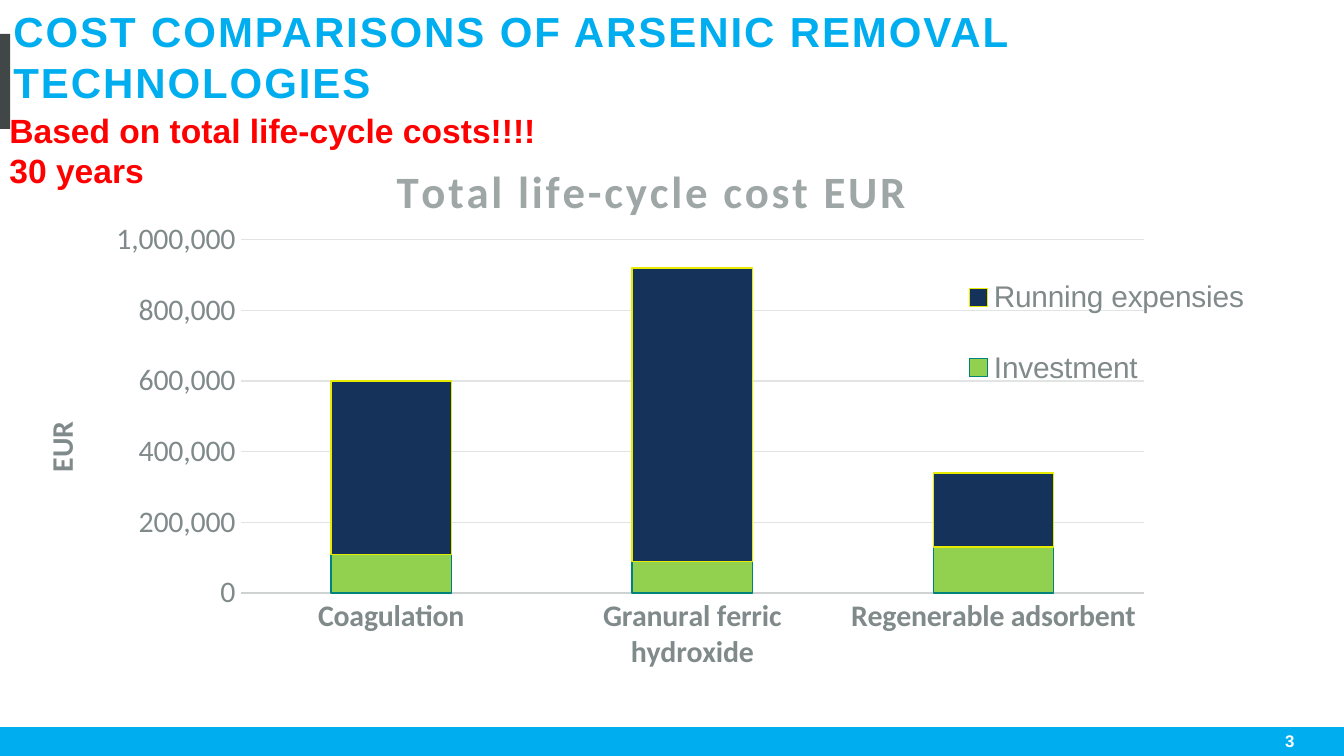
from lxml.etree import SubElement
from pptx import Presentation
from pptx.chart.data import CategoryChartData
from pptx.dml.color import RGBColor
from pptx.enum.chart import XL_CHART_TYPE, XL_LEGEND_POSITION, XL_TICK_MARK
from pptx.enum.shapes import MSO_SHAPE
from pptx.enum.text import MSO_ANCHOR, MSO_AUTO_SIZE, PP_ALIGN
from pptx.oxml import parse_xml
from pptx.oxml.ns import nsdecls, qn
from pptx.util import Inches, Pt

W = 10
H = W * 9 / 16
BLUE, DARK, GREY = "00AEEF", "414646", "818A8A"
CATEGORIES = ["Coagulation", "Granural ferric hydroxide", "Regenerable adsorbent"]
SERIES = [  # name, values, fill, line
    ("Investment", (110000, 90000, 130000), "92D050", "00827D"),
    ("Running expensies", (490000, 830000, 210000), "14325A", "E6EB00"),
]


def rgb(hex_color):
    return RGBColor.from_string(hex_color)


def emu(box):
    return [Inches(v) for v in box]


def part(box, x, y, w, h):
    """Return the part of a box given as shares of its width and height."""
    left, top, width, height = box
    return left + x * width, top + y * height, w * width, h * height


def set_font(font, color, **values):
    for name, value in {"name": "Arial", "bold": True, **values}.items():
        setattr(font, name, value)
    font.color.rgb = rgb(color)


def set_line(line, color, width=0.75):
    line.color.rgb = rgb(color)
    line.width = Pt(width)


def set_frame(tf, **values):
    defaults = {"word_wrap": True, "auto_size": MSO_AUTO_SIZE.NONE,
                "vertical_anchor": MSO_ANCHOR.MIDDLE}
    for name, value in {**defaults, **values}.items():
        setattr(tf, name, value)


def add_bar(s, box, color):
    sp = s.shapes.add_shape(MSO_SHAPE.RECTANGLE, *emu(box))
    sp.shadow.inherit = False
    sp.fill.solid()
    sp.fill.fore_color.rgb = rgb(color)
    sp.line.fill.background()
    return sp


def add_text(s, box, lines, color, size, align=PP_ALIGN.LEFT, inset=0.07):
    tf = s.shapes.add_textbox(*emu(box)).text_frame
    set_frame(tf, margin_left=Inches(inset), margin_right=Inches(inset),
              margin_top=Inches(0.04), margin_bottom=Inches(0.04))
    for i, line in enumerate(lines):
        p = tf.add_paragraph() if i else tf.paragraphs[0]
        p.alignment = align
        r = p.add_run()
        r.text = line
        set_font(r.font, color, size=Pt(size))


def add_footer(s, box):
    bar = add_bar(s, box, BLUE)
    set_line(bar.line, BLUE)
    add_text(s, part(box, 0.729, -0.24, 0.244, 1.43), ["3"], "FFFFFF", 9,
             PP_ALIGN.RIGHT, inset=0.1)


def add_heading(s, box):
    add_bar(s, part(box, 0, 0, 0.0075, 0.59), DARK)
    title = s.shapes.title
    title.left, title.top, title.width, title.height = emu(part(box, 0, 0.05, 0.9, 0.5))
    tf = title.text_frame
    set_frame(tf, margin_left=Inches(0.1), margin_right=Inches(0.1),
              margin_top=Inches(0.05), margin_bottom=Inches(0.44))
    p = tf.paragraphs[0]
    p.alignment = PP_ALIGN.LEFT
    r = p.add_run()
    r.text = "COST COMPARISONS OF ARSENIC REMOVAL TECHNOLOGIES"
    set_font(r.font, BLUE, size=Pt(22.5))
    r.font._element.set("spc", "100")
    add_text(s, part(box, 0, 0.435, 0.454, 0.57),
             ["Based on total life-cycle costs!!!!", "30 years"], "FF0000", 18)


def set_layout(element, x, y, w=None, h=None, inner=False):
    """Place a chart part by shares of the chart's size."""
    for old in element.findall(qn("c:layout")):
        element.remove(old)
    layout = parse_xml(f"<c:layout {nsdecls('c')}/>")
    manual = SubElement(layout, qn("c:manualLayout"))
    values = {"layoutTarget": "inner" if inner else None,
              "xMode": "edge", "yMode": "edge", "x": x, "y": y, "w": w, "h": h}
    for tag, value in values.items():
        if value is not None:
            SubElement(manual, qn(f"c:{tag}")).set("val", str(value))
    before = [c for c in element if c.tag in (qn("c:tx"), qn("c:legendPos"))]
    element.insert(element.index(before[-1]) + 1 if before else 0, layout)


def set_title(title, text, color, size, x, y, spacing=0):
    r = title.text_frame.paragraphs[0].add_run()
    r.text = text
    set_font(r.font, color, size=Pt(size), name="Calibri")
    r.font._element.set("spc", str(spacing))
    set_layout(title._element, x, y)


def format_axes(chart):
    cat, val = chart.category_axis, chart.value_axis
    for axis, bold in ((cat, True), (val, False)):
        axis.major_tick_mark = axis.minor_tick_mark = XL_TICK_MARK.NONE
        set_font(axis.tick_labels.font, GREY, size=Pt(16), name="Calibri", bold=bold)
    set_line(cat.format.line, "CED2D2", 1.5)
    val.format.line.fill.background()
    set_line(val.major_gridlines.format.line, "E2E4E4")
    val.minimum_scale, val.maximum_scale, val.major_unit = 0, 1000000, 200000
    val.tick_labels.number_format = "#,##0"
    val.tick_labels.number_format_is_linked = False
    set_title(val.axis_title, "EUR", GREY, 16, 0.035, 0.5)


def format_legend(chart):
    chart.has_legend = True
    legend = chart.legend
    legend.position = XL_LEGEND_POSITION.RIGHT
    legend.include_in_layout = True
    set_font(legend.font, GREY, size=Pt(16), bold=False)
    set_layout(legend._element, 0.73, 0.19, 0.22, 0.32)


def add_cost_chart(s, box):
    data = CategoryChartData(number_format="#,##0")
    data.categories = CATEGORIES
    for name, values, *_ in SERIES:
        data.add_series(name, values)
    chart = s.shapes.add_chart(XL_CHART_TYPE.COLUMN_STACKED, *emu(box), data).chart
    set_font(chart.font, DARK, size=Pt(10), name="Calibri", bold=False)
    set_title(chart.chart_title, "Total life-cycle cost EUR", "9FA6A6", 24, 0.3, 0.03, 150)
    plot = chart.plots[0]
    plot.gap_width, plot.overlap, plot.vary_by_categories = 150, 100, False
    for series, (_, _, fill, line) in zip(plot.series, SERIES):
        series.invert_if_negative = False
        series.format.fill.solid()
        series.format.fill.fore_color.rgb = rgb(fill)
        set_line(series.format.line, line)
    format_axes(chart)
    format_legend(chart)
    set_layout(plot._element.getparent(), 0.189, 0.185, 0.679, 0.63, inner=True)


def main():
    prs = Presentation()
    prs.slide_width, prs.slide_height = Inches(W), Inches(H)
    s = prs.slides.add_slide(prs.slide_layouts[5])
    page = (0, 0, W, H)
    add_footer(s, part(page, 0, 0.963, 1, 0.037))
    add_heading(s, part(page, 0, 0.045, 1, 0.213))
    add_cost_chart(s, part(page, -0.008, 0.18, 0.99, 0.742))
    prs.save("out.pptx")


if __name__ == "__main__":
    main()
